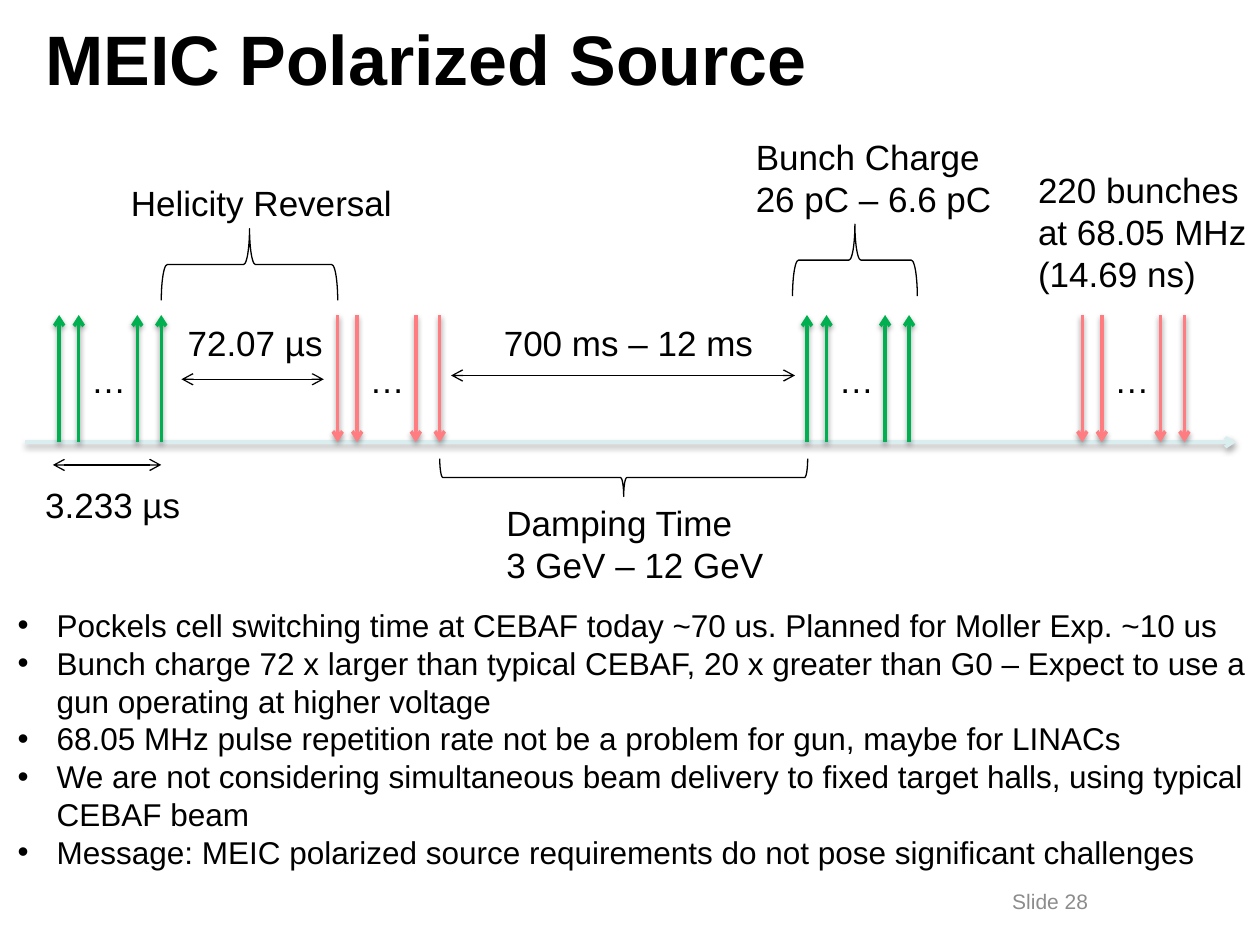
from dataclasses import dataclass

from lxml.etree import SubElement
from pptx import Presentation
from pptx.dml.color import RGBColor
from pptx.enum.shapes import MSO_CONNECTOR as Connector, MSO_SHAPE as Preset
from pptx.enum.text import MSO_ANCHOR as Anchor, MSO_AUTO_SIZE as AutoSize, PP_ALIGN as Align
from pptx.oxml.ns import qn
from pptx.util import Inches, Pt


@dataclass(frozen=True)
class Theme:
    """Colours, font and type sizes of the slide."""
    font: str = "Arial"
    ink: str = "000000"
    axis: str = "DAEDEF"
    up: str = "00B050"
    down: str = "FF7C80"
    muted: str = "8C8C8C"
    title: int = 40
    label: int = 20
    body: int = 18
    footer: int = 12


THEME = Theme()
AXIS_Y, PULSE_TOP = 3.51, 2.5
PULSE_OFFSETS = (0, 0.155, 0.62, 0.81)
TRAINS = [(0.47, True), (6.405, True), (2.68, False), (8.59, False)]
SPANS = [(1.44, 2.57, 3.01), (3.58, 6.31, 2.98), (0.42, 1.28, 3.69)]
BRACES = [
    (1.28, 1.815, 1.4, 0.57, 90),
    (6.29, 1.78, 0.99, 0.57, 90),
    (3.49, 3.64, 2.92, 0.3, 270),
]
LABELS = [
    (["Helicity Reversal"], 0.94, 1.39, 2.29, 0.44),
    (["72.07 µs"], 1.39, 2.5, 1.28, 0.44),
    (["700 ms – 12 ms"], 3.9, 2.5, 2.19, 0.44),
    (["3.233 µs"], 0.26, 3.79, 1.28, 0.44),
    (["Damping Time", "3 GeV – 12 GeV"], 3.92, 3.93, 2.26, 0.77),
    (["Bunch Charge", "26 pC – 6.6 pC"], 5.9, 1.03, 2.16, 0.77),
    (["220 bunches", "at 68.05 MHz", "(14.69 ns)"], 8.14, 1.29, 1.87, 1.11),
]
BULLETS = [
    "Pockels cell switching time at CEBAF today ~70 us. Planned for Moller Exp. ~10 us",
    "Bunch charge 72 x larger than typical CEBAF, 20 x greater than G0 – Expect to use a gun operating at higher voltage",
    "68.05 MHz pulse repetition rate not be a problem for gun, maybe for LINACs",
    "We are not considering simultaneous beam delivery to fixed target halls, using typical CEBAF beam",
    "Message: MEIC polarized source requirements do not pose significant challenges",
]


def place(shape, left, top, width, height):
    """Move and size a shape, in inches."""
    shape.left, shape.top = Inches(left), Inches(top)
    shape.width, shape.height = Inches(width), Inches(height)


def write(shape, lines, size, color=THEME.ink, bold=False, align=Align.LEFT):
    """Fill a shape with one formatted paragraph per line."""
    frame = shape.text_frame
    frame.text = "\n".join(lines)
    for paragraph in frame.paragraphs:
        paragraph.alignment = align
        paragraph.space_before = Pt(0)
        font = paragraph.font
        font.name, font.size, font.bold = THEME.font, Pt(size), bold
        font.color.rgb = RGBColor.from_string(color)


def add_label(slide, lines, left, top, width, height):
    """Add an unwrapped diagram label."""
    box = slide.shapes.add_textbox(*map(Inches, (left, top, width, height)))
    box.text_frame.word_wrap = False
    write(box, lines, THEME.label)


def add_arrow(slide, start, end, color, width, both_ends=False, shadow=True):
    """Add a straight arrow, with the theme's shadow unless it is turned off."""
    arrow = slide.shapes.add_connector(Connector.STRAIGHT, *map(Inches, (*start, *end)))
    arrow.line.color.rgb = RGBColor.from_string(color)
    arrow.line.width = Pt(width)
    outline = arrow.line._get_or_add_ln()
    for tag in ("a:headEnd", "a:tailEnd") if both_ends else ("a:tailEnd",):
        SubElement(outline, qn(tag), type="arrow")
    if not shadow:
        SubElement(arrow._element.spPr, qn("a:effectLst"))


def add_train(slide, start, upward):
    """Add four pulses of one helicity with an ellipsis between them."""
    color = THEME.up if upward else THEME.down
    tail, tip = (AXIS_Y, PULSE_TOP) if upward else (PULSE_TOP, AXIS_Y)
    for offset in PULSE_OFFSETS:
        x = start + offset
        add_arrow(slide, (x, tail), (x, tip), color, 2)
    add_label(slide, ["…"], start + PULSE_OFFSETS[1], 2.8, 0.48, 0.44)


def add_brace(slide, left, top, width, height, rotation):
    """Add a horizontal brace that covers the given area once rotated."""
    brace = slide.shapes.add_shape(Preset.LEFT_BRACE, 0, 0, 0, 0)
    place(brace, left + (width - height) / 2, top + (height - width) / 2, height, width)
    brace.rotation = rotation
    brace.shadow.inherit = False
    brace.fill.background()
    brace.line.color.rgb = RGBColor.from_string(THEME.ink)
    brace.line.width = Pt(0.75)


def add_bullets(slide, lines):
    """Fill the body placeholder with a hanging bullet list."""
    body = slide.placeholders[1]
    place(body, 0.04, 4.76, 9.96, 2.26)
    write(body, lines, THEME.body)
    body.text_frame.auto_size = AutoSize.NONE
    for paragraph in body.text_frame.paragraphs:
        properties = paragraph._p.get_or_add_pPr()
        properties.set("marL", str(Inches(0.31)))
        properties.set("indent", str(Inches(-0.31)))
        SubElement(properties, qn("a:buFont"), typeface=THEME.font)
        SubElement(properties, qn("a:buChar"), char="•")
        font_defaults = properties.find(qn("a:defRPr"))
        properties.append(font_defaults)


def add_footer(slide, text):
    """Add the centred slide number."""
    box = slide.shapes.add_textbox(*map(Inches, (7.17, 6.95, 2.33, 0.4)))
    box.text_frame.word_wrap = True
    box.text_frame.vertical_anchor = Anchor.MIDDLE
    write(box, [text], THEME.footer, THEME.muted, align=Align.CENTER)


def main():
    """Build and save the slide."""
    presentation = Presentation()
    presentation.slide_width, presentation.slide_height = Inches(10), Inches(7.5)
    slide = presentation.slides.add_slide(presentation.slide_layouts[1])
    title = slide.shapes.title
    place(title, 0.26, 0, 9.48, 0.92)
    write(title, ["MEIC Polarized Source"], THEME.title, bold=True)
    add_arrow(slide, (0.2, AXIS_Y), (9.81, AXIS_Y), THEME.axis, 2)
    for start, upward in TRAINS:
        add_train(slide, start, upward)
    for left, right, y in SPANS:
        add_arrow(slide, (left, y), (right, y), THEME.ink, 0.75, both_ends=True, shadow=False)
    for brace in BRACES:
        add_brace(slide, *brace)
    for label in LABELS:
        add_label(slide, *label)
    add_footer(slide, "Slide 28")
    add_bullets(slide, BULLETS)
    presentation.save("out.pptx")


if __name__ == "__main__":
    main()
